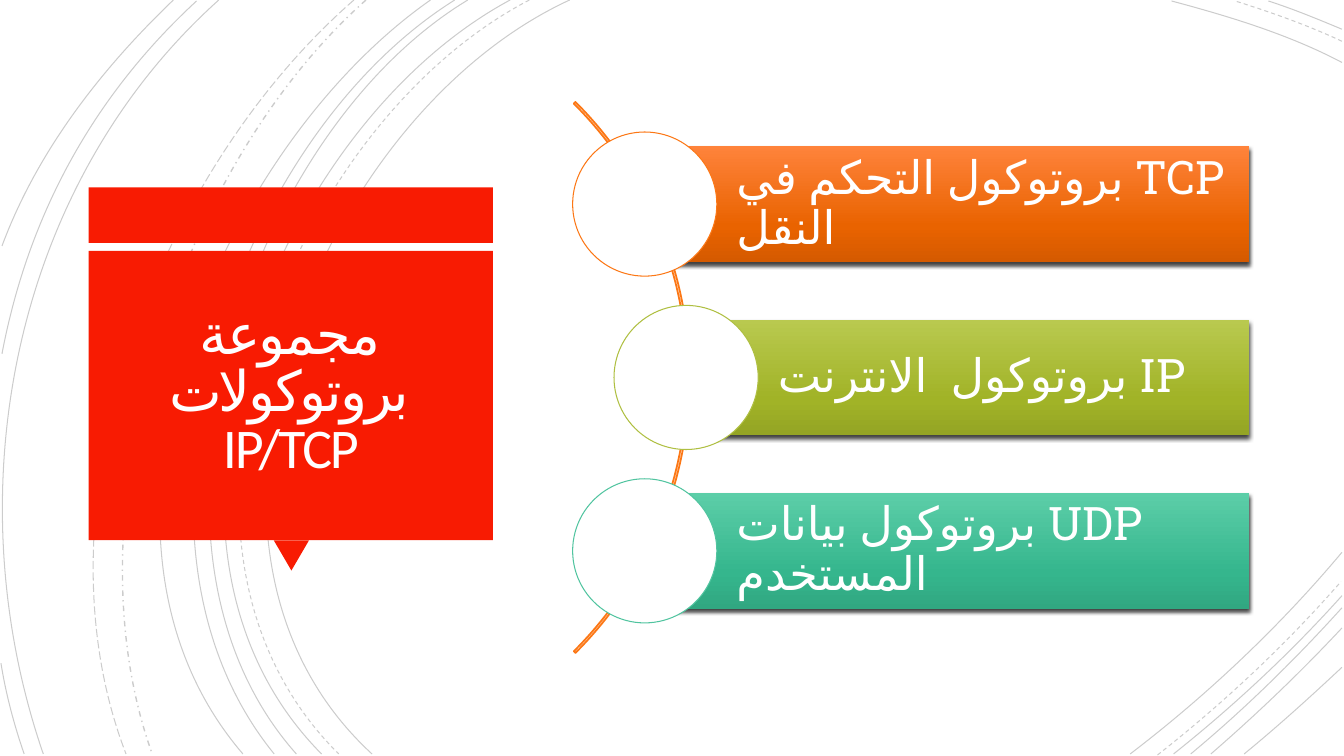
from lxml.etree import SubElement
from pptx import Presentation
from pptx.dml.color import RGBColor
from pptx.enum.dml import MSO_LINE
from pptx.enum.lang import MSO_LANGUAGE_ID
from pptx.enum.shapes import MSO_SHAPE
from pptx.enum.text import MSO_ANCHOR, MSO_AUTO_SIZE, PP_ALIGN
from pptx.oxml.ns import qn
from pptx.util import Inches, Pt

COLORS = {
    "white": "FFFFFF",
    "title": "FFFEFF",
    "black": "000000",
    "red": "F81B02",
    "orange": "FC7715",
    "lime": "AFBF41",
    "teal": "50C49F",
}
GRADIENTS = {
    "orange": ("FF833B", "E96300", "D55A00"),
    "lime": ("B9C94F", "A1B327", "94A424"),
    "teal": ("5CCEA8", "35B68D", "31A781"),
}
GRADIENT_STOPS = (0, 69, 100)
SOLID_CURVES = [
    [(5.65, 0), (3.15, 1.15), (1.43, 5.4), (3.69, 7.48)],
    [(13.31, 0.62), (12.78, 0.34), (12.18, 0.16), (11.62, 0.01)],
    [(11.21, 7.48), (11.97, 6.9), (12.69, 6.22), (13.31, 5.48)],
    [(5.06, 0), (2.7, 1.27), (1.1, 5.37), (3.19, 7.48)],
    [(13.31, 0.29), (13.07, 0.19), (12.83, 0.09), (12.58, 0.01)],
    [(11.64, 7.48), (12.23, 7.01), (12.8, 6.48), (13.31, 5.91)],
    [(4.64, 0), (2.44, 1.33), (1.1, 5.41), (2.94, 7.48)],
    [(11.81, 7.48), (12.34, 7.04), (12.84, 6.55), (13.31, 6.03)],
    [(4.51, 0), (2.31, 1.38), (0.97, 5.33), (2.72, 7.48)],
    [(12.01, 7.48), (12.46, 7.09), (12.9, 6.67), (13.31, 6.23)],
    [(4.27, 0), (2.17, 1.47), (0.53, 5.29), (2.41, 7.48)],
    [(12.34, 7.48), (12.67, 7.21), (12.99, 6.92), (13.31, 6.62)],
    [(2.17, 0), (0.11, 1.85), (-0.46, 4.9), (0.43, 7.48)],
    [(1.95, 0.01), (0.92, 0.96), (0.28, 2.14), (0.02, 3.51)],
    [(0.01, 6.58), (0.06, 6.89), (0.14, 7.19), (0.24, 7.48)],
    [(1.72, 0), (1, 0.69), (0.37, 1.5), (0.02, 2.44)],
]
DASHED_CURVES = [
    [(5.25, 0), (2.85, 1.25), (1.23, 5.37), (3.36, 7.48)],
    [(13.31, 0.41), (12.97, 0.25), (12.6, 0.12), (12.25, 0.01)],
    [(11.48, 7.49), (12.13, 6.98), (12.75, 6.4), (13.3, 5.77)],
]
DASH_DOT_CURVES = [[(3.63, 0), (1.76, 1.66), (0.65, 5.09), (1.51, 7.48)]]
LONG_DASH_CURVES = [[(3.51, 0), (1.57, 1.69), (0.29, 4.99), (1.25, 7.48)]]
CURVE_GROUPS = [
    (SOLID_CURVES, MSO_LINE.SOLID, 0.75),
    (DASHED_CURVES, MSO_LINE.DASH, 0.75),
    (DASH_DOT_CURVES, MSO_LINE.DASH_DOT, 1),
    (LONG_DASH_CURVES, MSO_LINE.LONG_DASH, 0.75),
]
PROTOCOLS = [
    ("TCP بروتوكول التحكم في النقل", "orange", 0),
    ("IP بروتوكول  الانترنت", "lime", 0.41),
    ("UDP بروتوكول بيانات المستخدم", "teal", 0),
]


def color_of(name):
    """Return the named colour."""
    return RGBColor.from_string(COLORS[name])


def add_box(page, kind, box, fill=None, line=None, width=0.75):
    """Add a flat preset shape in box (left, top, width, height in inches)."""
    shape = page.shapes.add_shape(kind, *map(Inches, box))
    shape.shadow.inherit = False
    if fill:
        shape.fill.solid()
        shape.fill.fore_color.rgb = color_of(fill)
    else:
        shape.fill.background()
    if line:
        shape.line.color.rgb = color_of(line)
        shape.line.width = Pt(width)
    else:
        shape.line.fill.background()
    return shape


def write_text(shape, text, *, size, font, color, align, line_spacing, insets, tracking=0):
    """Write one right-to-left paragraph into a shape."""
    frame = shape.text_frame
    frame.word_wrap = True
    frame.auto_size = MSO_AUTO_SIZE.NONE
    frame.vertical_anchor = MSO_ANCHOR.MIDDLE
    frame.margin_left, frame.margin_top, frame.margin_right, frame.margin_bottom = map(Inches, insets)
    para = frame.paragraphs[0]
    para.alignment = align
    para.line_spacing = line_spacing
    para._p.get_or_add_pPr().set("rtl", "1")
    span = para.add_run()
    span.text = text
    span.font.size = Pt(size)
    span.font.name = font
    span.font.language_id = MSO_LANGUAGE_ID.ARABIC
    span.font.color.rgb = color_of(color)
    span.font._element.set("spc", str(int(tracking * 100)))


def add_curve(page, points, dash, width):
    """Draw one faint cubic curve through its four control points."""
    corners = [(Inches(x), Inches(y)) for x, y in points]
    builder = page.shapes.build_freeform(*corners[0])
    builder.add_line_segments(corners[1:], close=False)
    curve = builder.convert_to_shape()
    curve.shadow.inherit = False
    curve.fill.background()
    curve.line.color.rgb = color_of("black")
    curve.line.width = Pt(width)
    curve.line.dash_style = dash
    ink = curve._element.xpath(".//a:ln//a:srgbClr")[0]
    SubElement(ink, qn("a:alpha"), val="20000")
    outline = curve._element.xpath(".//a:pathLst/*")[0]
    segments = outline.findall(qn("a:lnTo"))
    bezier = SubElement(outline, qn("a:cubicBezTo"))
    for segment in segments:
        bezier.append(segment[0])
        outline.remove(segment)


def add_backdrop(page):
    """Draw the sweeping curves behind the content."""
    for curves, dash, width in CURVE_GROUPS:
        for points in curves:
            add_curve(page, points, dash, width)


def add_title_panel(page, box):
    """Draw the red callout and put the title on it."""
    left, top, width, height = box
    add_box(page, MSO_SHAPE.RECTANGLE, (left, top, width, 0.55), "red")
    pointer = add_box(page, MSO_SHAPE.ISOSCELES_TRIANGLE,
                      (left + width / 2 - 0.17, top + height - 0.3, 0.35, 0.3), "red")
    pointer.rotation = 180
    add_box(page, MSO_SHAPE.RECTANGLE, (left, top + 0.63, width, height - 0.93), "red")
    title = page.shapes.title
    title.left, title.top = Inches(left + 0.09), Inches(top + 0.71)
    title.width, title.height = Inches(width - 0.18), Inches(height - 1.11)
    write_text(title, "مجموعة بروتوكولات IP/TCP", size=40, font="Calibri", color="title",
               align=PP_ALIGN.CENTER, line_spacing=0.85, insets=[0.25] * 4, tracking=-1.5)
    page.shapes._spTree.append(title._element)


def shade_bar(bar, theme):
    """Give a bar its vertical gradient and drop shadow."""
    bar.fill.gradient()
    bar.fill.gradient_angle = 270
    stops = bar._element.xpath(".//a:gsLst")[0]
    for stop in list(stops):
        stops.remove(stop)
    for position, value in zip(GRADIENT_STOPS, GRADIENTS[theme]):
        stop = SubElement(stops, qn("a:gs"), pos=str(position * 1000))
        SubElement(stop, qn("a:srgbClr"), val=value)
    effects = bar._element.xpath("./p:spPr/a:effectLst")[0]
    shadow = SubElement(effects, qn("a:outerShdw"), blurRad=str(Pt(3)), dist=str(Pt(2)),
                        dir="5400000", algn="ctr", rotWithShape="0")
    ink = SubElement(shadow, qn("a:srgbClr"), val=COLORS["black"])
    SubElement(ink, qn("a:alpha"), val="75000")


def add_protocol_list(page, box):
    """Draw the arc and the protocol bars with their circles."""
    left, top, width, height = box
    diameter, bar_height, arc_size = 1.43, 1.15, 7.73
    pitch = (height - diameter) / (len(PROTOCOLS) - 1)
    arc = add_box(page, MSO_SHAPE.BLOCK_ARC,
                  (left - 6.57, top + height / 2 - arc_size / 2, arc_size, arc_size),
                  line="orange", width=1.25)
    for index, value in enumerate((189, 27, 0.003)):
        arc.adjustments[index] = value
    for index, (text, theme, indent) in enumerate(PROTOCOLS):
        circle_left, circle_top = left + indent, top + index * pitch
        bar_left = circle_left + diameter / 2
        bar = add_box(page, MSO_SHAPE.RECTANGLE,
                      (bar_left, circle_top + (diameter - bar_height) / 2,
                       left + width - bar_left, bar_height))
        shade_bar(bar, theme)
        write_text(bar, text, size=33, font="Roboto Slab", color="white",
                   align=PP_ALIGN.LEFT, line_spacing=0.9, insets=(0.91, 0.09, 0.09, 0.09))
        add_box(page, MSO_SHAPE.OVAL, (circle_left, circle_top, diameter, diameter), "white", theme)


def main():
    """Build the slide and save the deck."""
    deck = Presentation()
    deck.slide_width, deck.slide_height = Inches(13.33), Inches(7.5)
    page = deck.slides.add_slide(deck.slide_layouts[5])
    add_backdrop(page)
    add_title_panel(page, (0.88, 1.86, 4.01, 3.8))
    add_protocol_list(page, (5.68, 1.31, 6.71, 4.87))
    deck.save("out.pptx")


if __name__ == "__main__":
    main()
